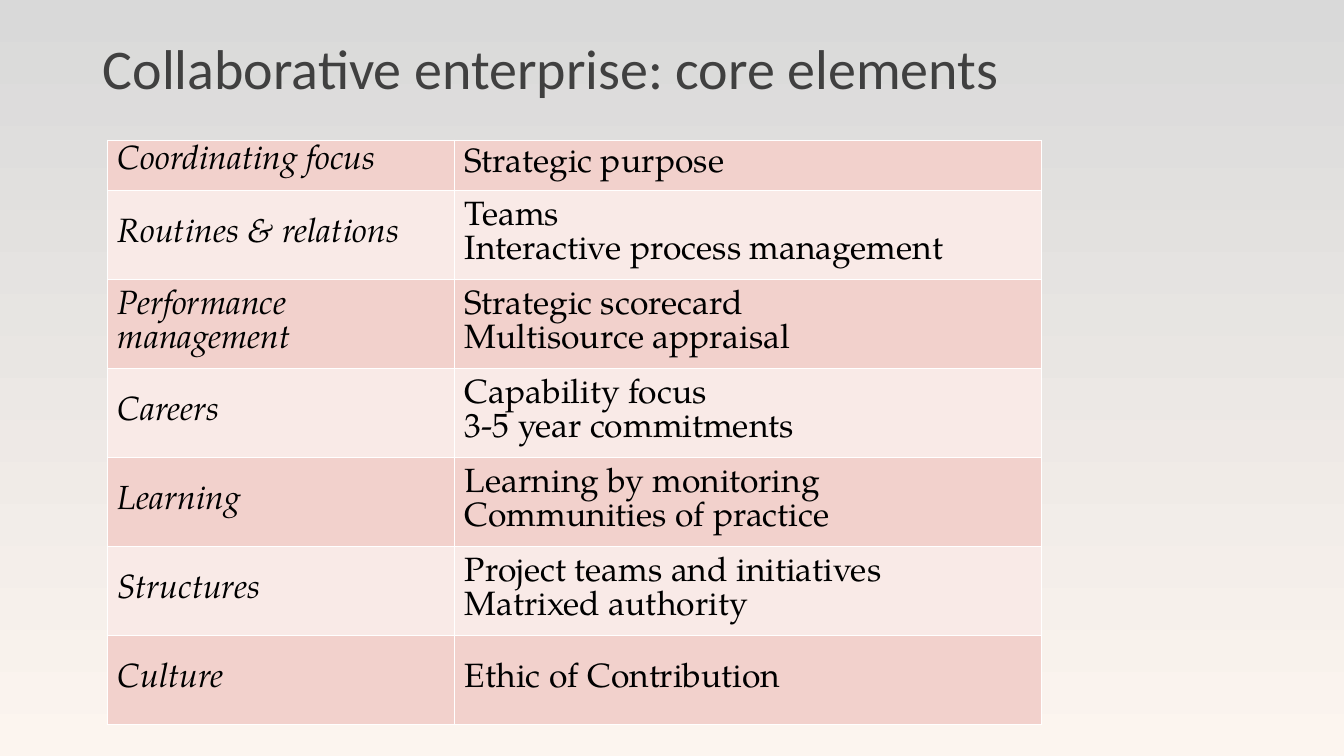
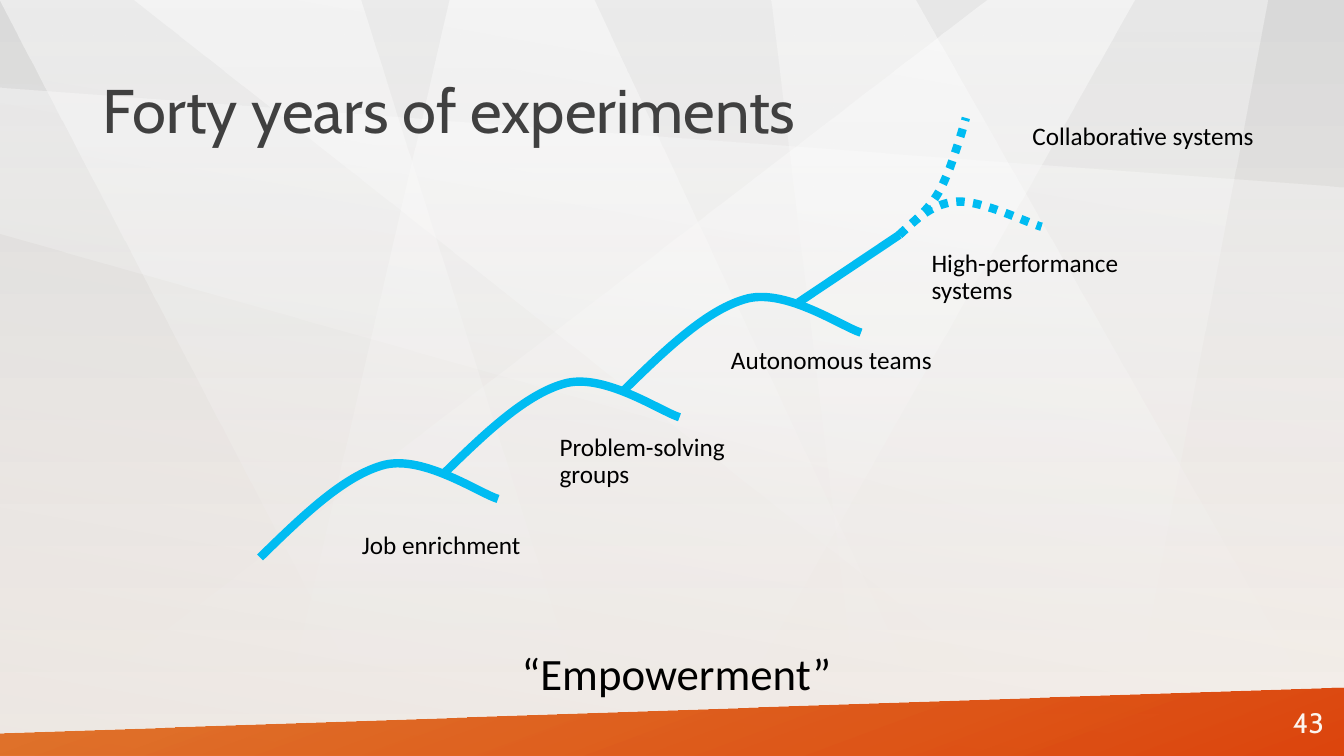
from dataclasses import dataclass

from lxml.etree import SubElement
from pptx import Presentation
from pptx.dml.color import RGBColor
from pptx.dml.fill import FillFormat
from pptx.enum.dml import MSO_LINE
from pptx.enum.shapes import MSO_CONNECTOR, MSO_SHAPE
from pptx.enum.text import MSO_ANCHOR, MSO_AUTO_SIZE, PP_ALIGN
from pptx.oxml import parse_xml
from pptx.oxml.ns import nsdecls, qn
from pptx.shapes.autoshape import Shape
from pptx.slide import Slide
from pptx.table import _Cell
from pptx.text.text import TextFrame
from pptx.util import Inches, Pt

Point = tuple[float, float]

HEADING, BLACK, WHITE, CREAM = "404040", "000000", "FFFFFF", "FCF5EF"
GREY, CURVE_BLUE = "D9D9D9", "00BCF2"
ROW_FILLS = ("F2D1CC", "F9EAE7")
CALIBRI, CABIN, PAGELLA = "Calibri", "Cabin", "TeX Gyre Pagella"


@dataclass(frozen=True)
class Gradient:
    colors: tuple[str, str]
    opacities: tuple[int, int]
    angle: int


@dataclass(frozen=True)
class Shard:
    corners: tuple[Point, ...]
    opacity: int = 50


@dataclass(frozen=True)
class Label:
    text: str
    left: float
    top: float
    width: float
    height: float
    inset: float


@dataclass(frozen=True)
class Element:
    name: str
    details: tuple[str, ...]


BACKDROP = Gradient((GREY, CREAM), (100, 100), 90)
VEIL = Gradient(("BFBFBF", WHITE), (25, 0), 280)
FOOTER = Gradient(("DD5900", "DC3C00"), (80, 95), 70)
FOOTER_CORNERS = ((0, 7.27), (13.34, 6.82), (13.33, 7.51), (0, 7.51))

SHARDS = (
    Shard(((9.79, 0), (0, 7.51), (7.01, 7.51), (11.25, 0))),
    Shard(((0, 0), (3.58, 0), (5.94, 7.5), (3.91, 7.5))),
    Shard(((1.32, 0), (9.07, 0), (13.33, 7.5), (10.83, 7.5))),
    Shard(((7.65, 0), (8.56, 7.5), (11.15, 7.5), (12.57, 0)), 40),
    Shard(((5.89, 0), (4.46, 0), (2.72, 7.5), (9.39, 7.5))),
    Shard(((0, 0.87), (13.33, 1.86), (13.33, 6.1), (0, 2.32)), 40),
)

ELEMENTS = (
    Element("Coordinating focus", ("Strategic purpose",)),
    Element("Routines & relations", ("Teams", "Interactive process management")),
    Element("Performance management", ("Strategic scorecard", "Multisource appraisal")),
    Element("Careers", ("Capability focus", "3-5 year commitments")),
    Element("Learning", ("Learning by monitoring", "Communities of practice")),
    Element("Structures", ("Project teams and initiatives", "Matrixed authority")),
    Element("Culture", ("Ethic of Contribution",)),
)

LABELS = (
    Label("Problem-solving groups", 5.08, 4.26, 2.58, 0.65, 0.47),
    Label("Job enrichment", 3.08, 5.24, 2.58, 0.37, 0.51),
    Label("Autonomous teams", 6.67, 3.4, 3.17, 0.37, 0.58),
    Label("High-performance systems", 8.83, 2.43, 2.67, 0.65, 0.41),
    Label("Collaborative systems", 10.01, 1.18, 2.67, 0.37, 0.23),
)

WAVE_STARTS = ((2.58, 5.53), (4.38, 4.72), (6.18, 3.88))
WAVE = ((0, 0), (0.42, -0.41), (0.84, -0.82), (1.24, -0.92),
        (1.63, -1.01), (2.17, -0.64), (2.36, -0.58))
RISING = ((8.92, 2.33), (9.04, 2.22), (9.17, 2.11), (9.25, 2), (9.33, 1.89),
          (9.36, 1.81), (9.42, 1.67), (9.47, 1.53), (9.53, 1.35), (9.58, 1.17))
FADING = ((8.92, 2.33), (9.09, 2.17), (9.26, 2.01), (9.5, 2),
          (9.74, 1.99), (10.19, 2.21), (10.33, 2.25))


def color(value: str) -> RGBColor:
    return RGBColor.from_string(value)


def paint(fill: FillFormat, gradient: Gradient) -> None:
    fill.gradient()
    fill.gradient_angle = (360 - gradient.angle) % 360
    for stop, value in zip(fill.gradient_stops, gradient.colors):
        stop.color.rgb = color(value)


def write(frame: TextFrame, *lines: str, font: str = CALIBRI, size: float = 18,
          ink: str = BLACK, italic: bool = False,
          align: PP_ALIGN = PP_ALIGN.LEFT, spacing: float | Pt = 0.9) -> None:
    for index, line in enumerate(lines):
        para = frame.add_paragraph() if index else frame.paragraphs[0]
        para.alignment = align
        para.line_spacing = spacing
        span = para.add_run()
        span.text = line
        span.font.name = font
        span.font.size = Pt(size)
        span.font.italic = italic
        span.font.color.rgb = color(ink)


def add_text(page: Slide, text: str, left: float, top: float, width: float, height: float,
             inset: float = 0.1, anchor: MSO_ANCHOR = MSO_ANCHOR.MIDDLE, **style) -> None:
    box = page.shapes.add_textbox(Inches(left), Inches(top), Inches(width), Inches(height))
    frame = box.text_frame
    frame.word_wrap = True
    frame.margin_left = Inches(inset)
    frame.vertical_anchor = anchor
    write(frame, text, **style)


def add_page(deck: Presentation) -> Slide:
    page = deck.slides.add_slide(deck.slide_layouts[5])
    paint(page.background.fill, BACKDROP)
    return page


def set_title(page: Slide, text: str, top: float, size: float, font: str) -> None:
    title = page.shapes.title
    title.left, title.top = Inches(0.92), Inches(top)
    title.width, title.height = Inches(11.5), Inches(1.45)
    title.text_frame.auto_size = MSO_AUTO_SIZE.NONE
    title.text_frame.vertical_anchor = MSO_ANCHOR.MIDDLE
    write(title.text_frame, text, font=font, size=size, ink=HEADING)
    title.element.getparent().append(title.element)


def add_outline(page: Slide, points: tuple[Point, ...], close: bool) -> Shape:
    corners = [(Inches(x), Inches(y)) for x, y in points]
    builder = page.shapes.build_freeform(*corners[0])
    builder.add_line_segments(corners[1:], close=close)
    shape = builder.convert_to_shape()
    shape.shadow.inherit = False
    return shape


def paint_panel(shape: Shape, gradient: Gradient) -> None:
    shape.shadow.inherit = False
    shape.line.fill.background()
    paint(shape.fill, gradient)
    stops = shape.element.spPr.iter(qn("a:srgbClr"))
    for stop, opacity in zip(stops, gradient.opacities):
        SubElement(stop, qn("a:alpha")).set("val", str(opacity * 1000))


def bend(shape: Shape) -> None:
    segments = list(shape.element.spPr.iter(qn("a:lnTo")))
    outline = segments[0].getparent()
    for first in range(0, len(segments), 3):
        curve = SubElement(outline, qn("a:cubicBezTo"))
        for segment in segments[first:first + 3]:
            curve.append(segment[0])
            outline.remove(segment)


def add_curve(page: Slide, controls: tuple[Point, ...], dotted: bool = False) -> None:
    curve = add_outline(page, controls, close=False)
    bend(curve)
    curve.fill.background()
    curve.line.color.rgb = color(CURVE_BLUE)
    curve.line.width = Pt(6)
    if dotted:
        curve.line.dash_style = MSO_LINE.ROUND_DOT


def add_straight(page: Slide, start: Point, end: Point) -> None:
    line = page.shapes.add_connector(
        MSO_CONNECTOR.STRAIGHT, *(Inches(value) for value in (*start, *end)))
    line.line.color.rgb = color(CURVE_BLUE)
    line.line.width = Pt(6)
    SubElement(line.element.spPr, qn("a:effectLst"))


def format_cell(cell: _Cell, fill: str, anchor: MSO_ANCHOR) -> None:
    cell.fill.solid()
    cell.fill.fore_color.rgb = color(fill)
    cell.vertical_anchor = anchor
    properties = cell._tc.get_or_add_tcPr()
    for index, side in enumerate(("lnL", "lnR", "lnT", "lnB")):
        properties.insert(index, parse_xml(
            f'<a:{side} {nsdecls("a")} w="{Pt(1)}"><a:solidFill>'
            f'<a:srgbClr val="{WHITE}"/></a:solidFill></a:{side}>'))


def add_elements_table(page: Slide) -> None:
    first_height, total_height = 0.5, 5.8
    other_height = (total_height - first_height) / (len(ELEMENTS) - 1)
    table = page.shapes.add_table(len(ELEMENTS), 2, Inches(1.07), Inches(1.39),
                                  Inches(9.26), Inches(total_height)).table
    table.first_row = table.horz_banding = False
    for column, width in zip(table.columns, (3.44, 5.82)):
        column.width = Inches(width)
    for index, element in enumerate(ELEMENTS):
        table.rows[index].height = Inches(other_height if index else first_height)
        for column, lines in enumerate(((element.name,), element.details)):
            cell = table.cell(index, column)
            top_cell = index == column == 0
            format_cell(cell, ROW_FILLS[index % 2],
                        MSO_ANCHOR.TOP if top_cell else MSO_ANCHOR.MIDDLE)
            write(cell.text_frame, *lines, font=PAGELLA, size=24,
                  italic=column == 0, spacing=Pt(24))


def add_scenery(page: Slide) -> None:
    for shard in SHARDS:
        paint_panel(add_outline(page, shard.corners, close=True),
                    Gradient((WHITE, WHITE), (shard.opacity, 0), 90))
    veil = page.shapes.add_shape(MSO_SHAPE.RECTANGLE, 0, Inches(-0.01),
                                 Inches(13.33), Inches(7.5))
    paint_panel(veil, VEIL)
    paint_panel(add_outline(page, FOOTER_CORNERS, close=True), FOOTER)


def build_elements_page(deck: Presentation) -> None:
    page = add_page(deck)
    set_title(page, "Collaborative enterprise: core elements", -0.02, 40, CALIBRI)
    add_elements_table(page)


def build_experiments_page(deck: Presentation) -> None:
    page = add_page(deck)
    add_scenery(page)
    set_title(page, "Forty years of experiments", 0.4, 44, CABIN)
    for left, top in WAVE_STARTS:
        add_curve(page, tuple((left + x, top + y) for x, y in WAVE))
    add_straight(page, (7.92, 3), (8.92, 2.33))
    for branch in (RISING, FADING):
        add_curve(page, branch, dotted=True)
    for label in LABELS:
        add_text(page, label.text, label.left, label.top, label.width, label.height,
                 inset=label.inset)
    add_text(page, "“Empowerment”", 4.5, 6.42, 4.42, 0.59, anchor=MSO_ANCHOR.TOP,
             size=32, align=PP_ALIGN.CENTER)
    add_text(page, "43", 12.16, 6.97, 1.07, 0.4, font=CABIN, size=20, ink=CREAM,
             align=PP_ALIGN.RIGHT, spacing=1.0)


def main() -> None:
    deck = Presentation()
    deck.slide_width, deck.slide_height = Inches(13.33), Inches(7.5)
    build_elements_page(deck)
    build_experiments_page(deck)
    deck.save("out.pptx")


if __name__ == "__main__":
    main()
